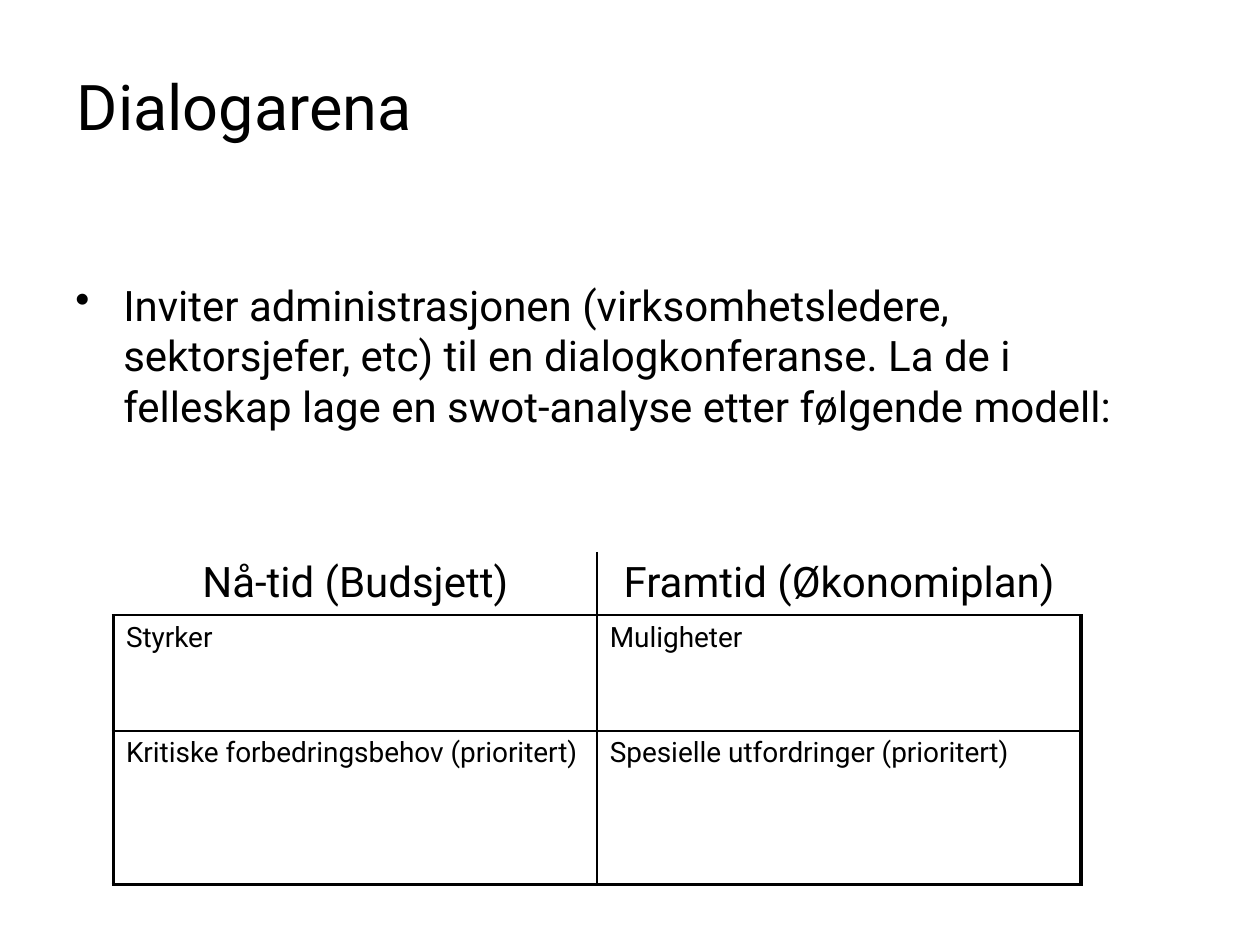
from lxml import etree
from pptx import Presentation
from pptx.dml.color import RGBColor
from pptx.enum.text import MSO_ANCHOR, PP_ALIGN
from pptx.oxml.ns import qn
from pptx.util import Inches, Pt

BLACK = RGBColor(0x00, 0x00, 0x00)
WHITE = RGBColor(0xFF, 0xFF, 0xFF)
FONT = "Roboto"
LEFT, CENTER = PP_ALIGN.LEFT, PP_ALIGN.CENTER
MIDDLE = MSO_ANCHOR.MIDDLE
THIN, THICK = 1, 2.25


def write_text(text_frame, text, size, alignment=LEFT):
    text_frame.text = text
    paragraph = text_frame.paragraphs[0]
    paragraph.alignment = alignment
    paragraph.font.name = FONT
    paragraph.font.size = Pt(size)
    paragraph.font.color.rgb = BLACK
    return paragraph


def set_borders(cell, widths):
    """Draw left, right, top and bottom borders; a width of 0 means no line."""
    properties = cell._tc.get_or_add_tcPr()
    for position, (side, width) in enumerate(zip("LRTB", widths)):
        line = etree.Element(qn(f"a:ln{side}"), w=str(Pt(width)))
        properties.insert(position, line)
        if width:
            fill = etree.SubElement(line, qn("a:solidFill"))
            etree.SubElement(fill, qn("a:srgbClr"), val=str(BLACK))
        else:
            etree.SubElement(line, qn("a:noFill"))


presentation = Presentation()
presentation.slide_width = Inches(10)
presentation.slide_height = Inches(7.5)
slide = presentation.slides.add_slide(presentation.slide_layouts[5])
slide.background.fill.solid()
slide.background.fill.fore_color.rgb = WHITE

# Title
title = slide.shapes.title
title.left, title.top = Inches(0.51), Inches(0.21)
title.width, title.height = Inches(8.25), Inches(1.25)
title.text_frame.vertical_anchor = MIDDLE
write_text(title.text_frame, "Dialogarena", 36)

# Bulleted invitation
invitation = slide.shapes.add_textbox(Inches(0.5), Inches(2.17), Inches(8.52), Inches(4.5))
invitation.text_frame.word_wrap = True
paragraph = write_text(
    invitation.text_frame,
    "Inviter administrasjonen (virksomhetsledere, sektorsjefer, etc) til en "
    "dialogkonferanse. La de i felleskap lage en swot-analyse etter følgende modell:",
    24,
)
paragraph.space_before = Pt(4.8)
paragraph_properties = paragraph._p.get_or_add_pPr()
paragraph_properties.set("marL", str(Inches(0.38)))
paragraph_properties.set("indent", str(Inches(-0.38)))
bullet = etree.Element(qn("a:buChar"), char="•")
paragraph_properties.find(qn("a:spcBef")).addnext(bullet)

# SWOT table
swot_rows = [
    ("Nå-tid (Budsjett)", "Framtid (Økonomiplan)"),
    ("Styrker", "Muligheter"),
    ("Kritiske forbedringsbehov (prioritert)", "Spesielle utfordringer (prioritert)"),
]
row_heights = [0.49, 0.92, 1.22]
swot_frame = slide.shapes.add_table(
    len(swot_rows), 2, Inches(0.9), Inches(4.38), Inches(7.68), Inches(sum(row_heights))
)
swot_table = swot_frame.table
swot_table.first_row = False
swot_table.horz_banding = False
for column in swot_table.columns:
    column.width = Inches(3.84)

for row, (texts, height) in enumerate(zip(swot_rows, row_heights)):
    swot_table.rows[row].height = Inches(height)
    is_header = row == 0
    outer = 0 if is_header else THICK
    top = 0 if is_header else THIN
    bottom = THICK if row == len(swot_rows) - 1 else THIN
    for column, text in enumerate(texts):
        cell = swot_table.cell(row, column)
        cell.fill.background()
        if is_header:
            write_text(cell.text_frame, text, 24, CENTER)
        else:
            write_text(cell.text_frame, text, 16)
        left, right = (outer, THIN) if column == 0 else (THIN, outer)
        set_borders(cell, (left, right, top, bottom))

presentation.save("out.pptx")
